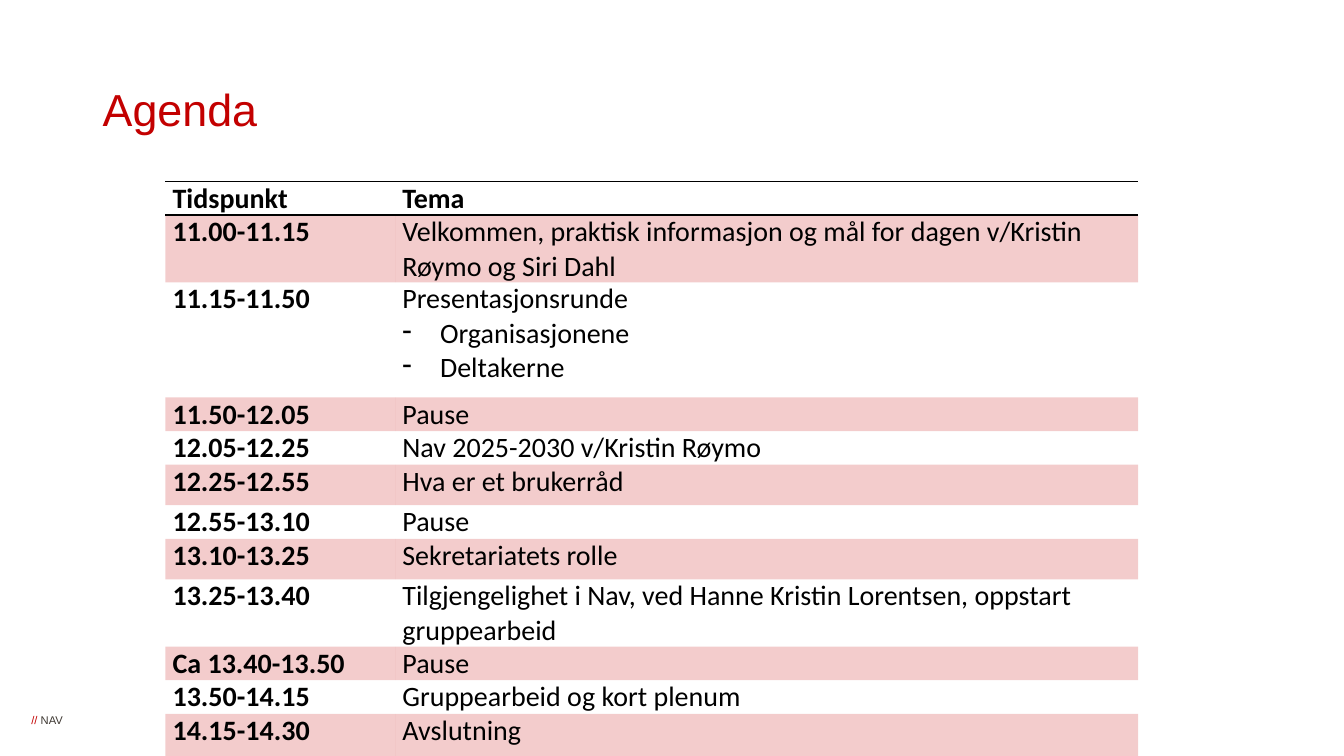
from dataclasses import dataclass

from lxml.etree import SubElement
from pptx import Presentation
from pptx.dml.color import RGBColor
from pptx.enum.text import MSO_ANCHOR
from pptx.oxml.ns import qn
from pptx.slide import Slide
from pptx.table import Table, _Cell
from pptx.text.text import TextFrame, _Paragraph
from pptx.util import Cm, Pt

RED = "C30000"
BLACK = "000000"
GREY = "3E3832"
BAND_OPACITY = 20
NO_STYLE_ID = "{2D5ABB26-0587-4C30-8999-92F81FD0307C}"
COLUMN_WIDTHS = (5.79, 18.72)


@dataclass
class AgendaItem:
    time: str
    topic: str
    height: float = 0.84
    bullets: tuple[str, ...] = ()


HEADER = AgendaItem("Tidspunkt", "Tema")
ITEMS = [
    AgendaItem("11.00-11.15", "Velkommen, praktisk informasjon og mål for dagen "
               "v/Kristin Røymo og Siri Dahl", 1.09),
    AgendaItem("11.15-11.50", "Presentasjonsrunde", 2.9, ("Organisasjonene", "Deltakerne")),
    AgendaItem("11.50-12.05", "Pause"),
    AgendaItem("12.05-12.25", "Nav 2025-2030 v/Kristin Røymo"),
    AgendaItem("12.25-12.55", "Hva er et brukerråd", 1.02),
    AgendaItem("12.55-13.10", "Pause"),
    AgendaItem("13.10-13.25", "Sekretariatets rolle", 1.02),
    AgendaItem("13.25-13.40", "Tilgjengelighet i Nav, ved Hanne Kristin Lorentsen, "
               "oppstart gruppearbeid", 1.04),
    AgendaItem("Ca 13.40-13.50", "Pause"),
    AgendaItem("13.50-14.15", "Gruppearbeid og kort plenum"),
    AgendaItem("14.15-14.30", "Avslutning", 1.14),
]


def color(value: str) -> RGBColor:
    return RGBColor.from_string(value)


def add_span(para: _Paragraph, text: str, size: float, value: str,
             font: str = "Arial", bold: bool = False) -> None:
    span = para.add_run()
    span.text = text
    span.font.name = font
    span.font.size = Pt(size)
    span.font.bold = bold
    span.font.color.rgb = color(value)


def add_text_frame(page: Slide, left: float, top: float, width: float, height: float) -> TextFrame:
    box = page.shapes.add_textbox(Cm(left), Cm(top), Cm(width), Cm(height))
    box.text_frame.word_wrap = True
    return box.text_frame


def add_title(page: Slide) -> None:
    frame = add_text_frame(page, 2.34, 1.35, 29.21, 2.97)
    frame.vertical_anchor = MSO_ANCHOR.MIDDLE
    para = frame.paragraphs[0]
    para.line_spacing = 0.9
    add_span(para, "Agenda", 32, RED)


def add_footer(page: Slide) -> None:
    frame = add_text_frame(page, 0.69, 17.98, 6.38, 0.33)
    frame.margin_left = frame.margin_right = frame.margin_top = frame.margin_bottom = 0
    para = frame.paragraphs[0]
    para._p.get_or_add_pPr().set("marL", str(Cm(0.1)))
    add_span(para, "// ", 8, RED)
    add_span(para, "NAV", 8, GREY)


def add_dash_bullet(para: _Paragraph) -> None:
    properties = para._p.get_or_add_pPr()
    properties.set("marL", str(Cm(0.95)))
    properties.set("indent", str(-Cm(0.95)))
    SubElement(properties, qn("a:buChar")).set("char", "-")


def add_border(cell: _Cell, side: str) -> None:
    """Draw a thin line on one side, "T" or "B", before any fill is set."""
    line = SubElement(cell._tc.get_or_add_tcPr(), qn(f"a:ln{side}"), w=str(Pt(1)))
    SubElement(SubElement(line, qn("a:solidFill")), qn("a:srgbClr"), val=BLACK)


def fill_cell(cell: _Cell, banded: bool) -> None:
    if not banded:
        cell.fill.background()
        return
    cell.fill.solid()
    cell.fill.fore_color.rgb = color(RED)
    tint = cell._tc.get_or_add_tcPr().find(qn("a:solidFill")).find(qn("a:srgbClr"))
    SubElement(tint, qn("a:alpha"), val=str(BAND_OPACITY * 1000))


def write_cell(cell: _Cell, lines: tuple[str, ...], bold: bool, borders: str, banded: bool) -> None:
    cell.margin_left = cell.margin_right = Cm(0.18)
    cell.margin_top = cell.margin_bottom = 0
    frame = cell.text_frame
    for index, line in enumerate(lines):
        para = frame.add_paragraph() if index else frame.paragraphs[0]
        if index:
            add_dash_bullet(para)
        add_span(para, line, 20, BLACK, "Calibri", bold)
    for side in borders:
        add_border(cell, side)
    fill_cell(cell, banded)


def add_agenda(page: Slide) -> Table:
    items = [HEADER, *ITEMS]
    frame = page.shapes.add_table(len(items), len(COLUMN_WIDTHS), Cm(4.17), Cm(4.57),
                                  Cm(sum(COLUMN_WIDTHS)), Cm(sum(item.height for item in items)))
    table = frame.table
    table._tbl.tblPr.find(qn("a:tableStyleId")).text = NO_STYLE_ID
    table.horz_banding = False
    for column, width in zip(table.columns, COLUMN_WIDTHS):
        column.width = Cm(width)
    borders = {0: "TB", len(ITEMS): "B"}
    for index, item in enumerate(items):
        table.rows[index].height = Cm(item.height)
        sides, banded = borders.get(index, ""), index % 2 == 1
        write_cell(table.cell(index, 0), (item.time,), True, sides, banded)
        write_cell(table.cell(index, 1), (item.topic, *item.bullets), index == 0, sides, banded)
    return table


def main() -> None:
    deck = Presentation()
    deck.slide_width, deck.slide_height = Cm(33.87), Cm(19.05)
    page = deck.slides.add_slide(deck.slide_layouts[6])
    add_footer(page)
    add_title(page)
    add_agenda(page)
    deck.save("out.pptx")


if __name__ == "__main__":
    main()
